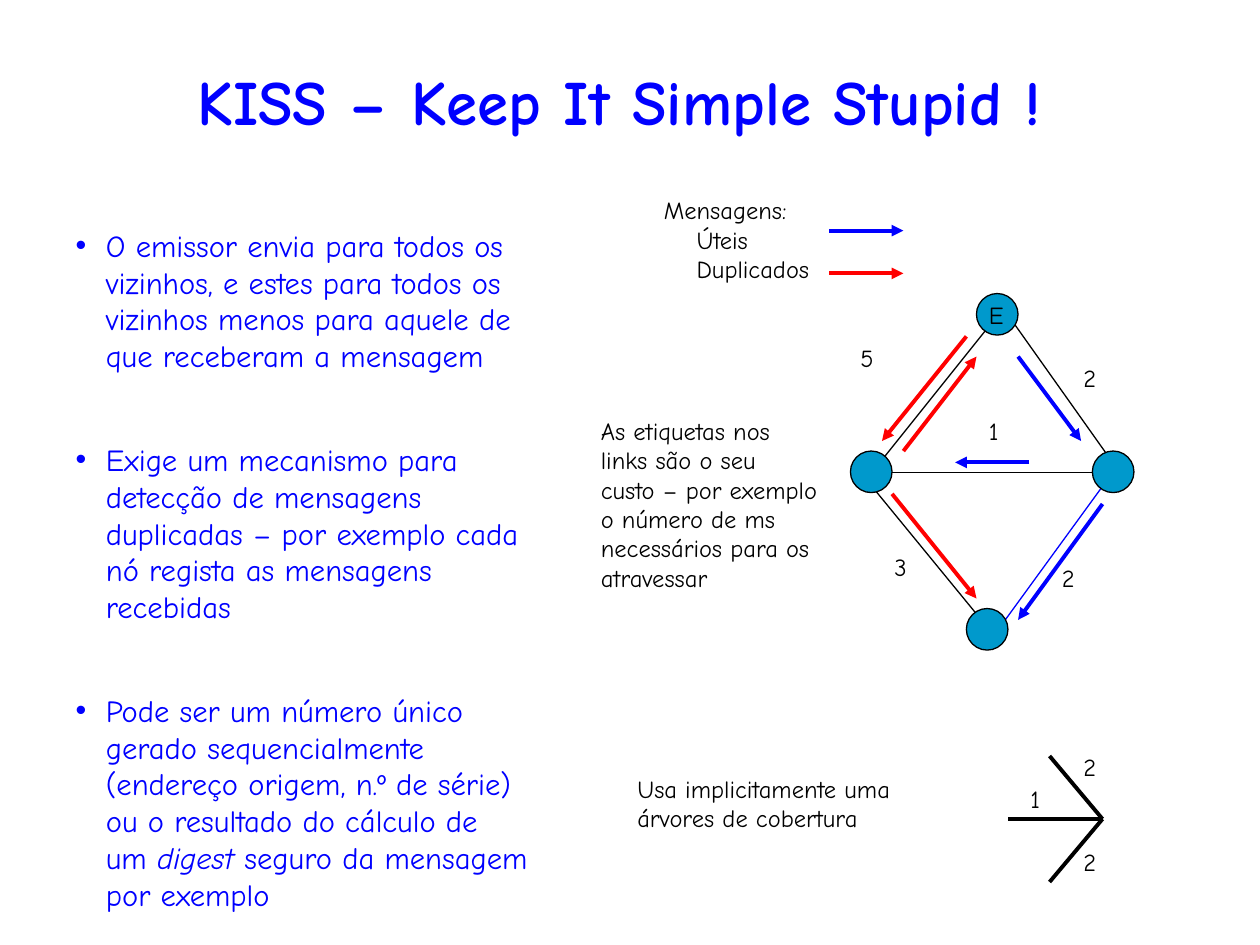
from pptx import Presentation
from pptx.dml.color import RGBColor
from pptx.enum.shapes import MSO_CONNECTOR as Connector, MSO_SHAPE as Shape
from pptx.enum.text import MSO_ANCHOR as Anchor, MSO_AUTO_SIZE as AutoSize, PP_ALIGN as Align
from pptx.oxml.ns import qn
from pptx.util import Inches, Pt
from lxml.etree import SubElement

FONT = "Comic Neue"
BLUE, RED, BLACK, TEAL = "0000FF", "FF0000", "000000", "0099CC"
NODE_SIZE = 0.33
THIN, THICK = 0.75, 2.25


def color(hex_code):
    return RGBColor.from_string(hex_code)


def place(item, left, top, width, height):
    item.left, item.top = Inches(left), Inches(top)
    item.width, item.height = Inches(width), Inches(height)


def add_run(paragraph, text, size, ink, bold=False, italic=False):
    run = paragraph.add_run()
    run.text = text
    font = run.font
    font.name, font.size, font.bold, font.italic = FONT, Pt(size), bold, italic
    font.color.rgb = color(ink)


def indent(paragraph, left, first=0):
    props = paragraph._p.get_or_add_pPr()
    props.set("marL", str(Inches(left)))
    props.set("indent", str(Inches(first)))


def add_title(slide, text):
    title = slide.shapes.title
    place(title, 0.33, 0.42, 9.17, 0.75)
    frame = title.text_frame
    frame.vertical_anchor, frame.auto_size = Anchor.MIDDLE, AutoSize.NONE
    heading = frame.paragraphs[0]
    heading.alignment = Align.CENTER
    add_run(heading, text, 36, BLUE, bold=True)


def add_bullets(slide, bullets):
    body = slide.placeholders[1]
    place(body, 0.5, 1.75, 3.79, 5.41)
    frame = body.text_frame
    frame.auto_size = AutoSize.NONE
    for number, pieces in enumerate(bullets):
        bullet = frame.add_paragraph() if number else frame.paragraphs[0]
        bullet.space_before = Pt(38.5 if number else 0)
        indent(bullet, 0.24, -0.24)
        for text, italic in pieces:
            add_run(bullet, text, 17.5, BLUE, italic=italic)


def add_note(slide, left, top, width, height, *lines, nested=0.26):
    """Text box whose lines after the first are indented."""
    box = slide.shapes.add_textbox(*map(Inches, (left, top, width, height)))
    frame = box.text_frame
    frame.word_wrap = True
    for number, text in enumerate(lines):
        line = frame.add_paragraph() if number else frame.paragraphs[0]
        if number:
            indent(line, nested)
        add_run(line, text, 14, BLACK)


def add_line(slide, start, end, ink=BLACK, weight=THIN, arrow=False):
    line = slide.shapes.add_connector(
        Connector.STRAIGHT, *map(Inches, (*start, *end)))
    line.line.color.rgb = color(ink)
    line.line.width = Pt(weight)
    if arrow:
        SubElement(line.line._get_or_add_ln(), qn("a:tailEnd"), type="triangle")
    SubElement(line._element.spPr, qn("a:effectLst"))


def add_node(slide, left, top):
    node = slide.shapes.add_shape(
        Shape.OVAL, *map(Inches, (left, top, NODE_SIZE, NODE_SIZE)))
    node.shadow.inherit = False
    node.fill.solid()
    node.fill.fore_color.rgb = color(TEAL)
    node.line.color.rgb = color(BLACK)
    node.line.width = Pt(THIN)


def add_network(slide):
    # Links between nodes
    for start, end, ink in [
        ((6.83, 3.75), (7.92, 5.08), BLACK),
        ((7.92, 2.5), (6.92, 3.75), BLACK),
        ((8, 2.5), (8.83, 3.67), BLACK),
        ((8.83, 3.75), (6.92, 3.75), BLACK),
        ((7.92, 5), (8.83, 3.75), BLUE),
    ]:
        add_line(slide, start, end, ink)

    for left, top in [(6.75, 3.58), (7.75, 2.33), (7.67, 4.83), (8.67, 3.58)]:
        add_node(slide, left, top)

    # Messages: useful in blue, duplicated in red; the first two are the legend
    for start, end, ink in [
        ((6.58, 1.83), (7.17, 1.83), BLUE),
        ((6.58, 2.17), (7.17, 2.17), RED),
        ((8.75, 4), (8.08, 4.92), BLUE),
        ((8.08, 2.83), (8.58, 3.5), BLUE),
        ((8.17, 3.67), (7.58, 3.67), BLUE),
        ((7.17, 3.58), (7.75, 2.83), RED),
        ((7.67, 2.67), (7, 3.5), RED),
        ((7.08, 3.92), (7.75, 4.75), RED),
    ]:
        add_line(slide, start, end, ink, THICK, arrow=True)


def add_spanning_tree(slide):
    root = (8.75, 6.5)
    for leaf in [(8.33, 6), (8, 6.5), (8.33, 7)]:
        add_line(slide, leaf, root, weight=THICK)


def add_labels(slide):
    # Sender and link costs
    for text, left, top, width in [
        ("E", 7.75, 2.33, 0.27),
        ("5", 6.73, 2.67, 0.27),
        ("2", 8.5, 2.83, 0.27),
        ("1", 7.75, 3.25, 0.42),
        ("3", 7, 4.33, 0.27),
        ("2", 8.33, 4.42, 0.27),
        ("2", 8.5, 5.92, 0.27),
        ("1", 8.08, 6.17, 0.42),
        ("2", 8.5, 6.67, 0.27),
    ]:
        add_note(slide, left, top, width, 0.33, text)

    # Legend and remarks
    add_note(slide, 5.17, 1.5, 2.42, 0.81, "Mensagens:", "Úteis", "Duplicados")
    add_note(slide, 4.67, 3.25, 1.92, 1.51,
             "As etiquetas nos links são o seu custo – por exemplo "
             "o número de ms necessários para os atravessar")
    add_note(slide, 4.96, 6.09, 2.35, 0.57,
             "Usa implicitamente uma árvores de cobertura")


def main():
    deck = Presentation()
    deck.slide_width, deck.slide_height = Inches(10), Inches(7.5)
    slide = deck.slides.add_slide(deck.slide_layouts[1])

    add_title(slide, "KISS – Keep It Simple Stupid !")
    add_bullets(slide, [
        [("O emissor envia para todos os vizinhos, e estes para todos os "
          "vizinhos menos para aquele de que receberam a mensagem", False)],
        [("Exige um mecanismo para detecção de mensagens duplicadas – por "
          "exemplo cada nó regista as mensagens recebidas", False)],
        [("Pode ser um número único gerado sequencialmente (endereço origem, "
          "n.º de série) ou o resultado do cálculo de um ", False),
         ("digest", True),
         (" seguro da mensagem por exemplo", False)],
    ])
    add_network(slide)
    add_spanning_tree(slide)
    add_labels(slide)
    deck.save("out.pptx")


if __name__ == "__main__":
    main()
